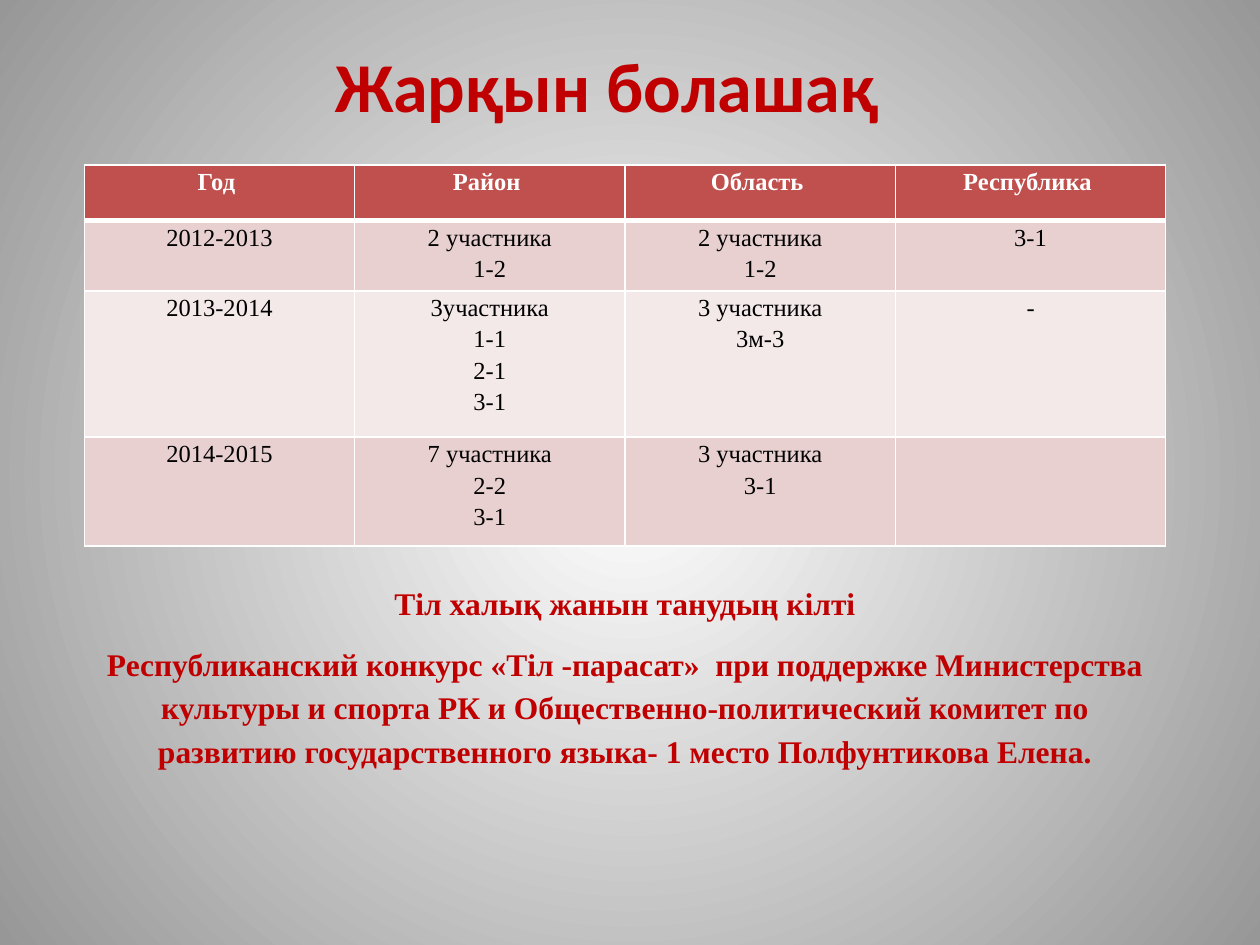
from lxml.etree import SubElement
from pptx import Presentation
from pptx.dml.color import RGBColor
from pptx.enum.text import MSO_ANCHOR, MSO_AUTO_SIZE, PP_ALIGN as AL
from pptx.oxml.ns import qn
from pptx.util import Pt

RED = RGBColor(0xC0, 0x00, 0x00)
HEADER = RGBColor(0xC0, 0x50, 0x4D)
BAND_DARK = RGBColor(0xE8, 0xD0, 0xD0)
BAND_LIGHT = RGBColor(0xF4, 0xE9, 0xE9)
WHITE = RGBColor(0xFF, 0xFF, 0xFF)
GRAY = RGBColor(0x97, 0x97, 0x97)
BLACK = RGBColor(0x00, 0x00, 0x00)
SERIF = "Times New Roman"

ROWS = [
    ["Год ", "Район ", "Область ", "Республика "],
    ["2012-2013", "2 участника\n1-2", "2 участника\n1-2", "3-1"],
    ["2013-2014", "3участника\n1-1\n2-1\n3-1", "3 участника\n3м-3", "-"],
    ["2014-2015", "7 участника\n2-2\n3-1", "3 участника\n3-1", ""],
]
ROW_HEIGHTS = [31.7, 40.3, 83.5, 62.3]
NOTES = [
    "Тіл халық жанын танудың кілті",
    "Республиканский конкурс «Тіл -парасат»  при поддержке Министерства "
    "культуры и спорта РК и Общественно-политический комитет по развитию "
    "государственного языка- 1 место Полфунтикова Елена.",
]


def format_text(tf, font, size, color, bold, align=AL.CENTER, spacing=None, after=None):
    for p in tf.paragraphs:
        p.alignment = align
        p.line_spacing = spacing
        p.space_after = after
        for r in p.runs:
            r.font.name = font
            r.font.size = Pt(size)
            r.font.bold = bold
            r.font.color.rgb = color


def set_background(s):
    fill = s.background.fill
    fill.gradient()
    for stop, color in zip(fill.gradient_stops, (WHITE, GRAY)):
        stop.color.rgb = color
    grad = s.element.find(".//" + qn("a:gradFill"))
    grad.remove(grad.find(qn("a:lin")))
    circle = SubElement(grad, qn("a:path"), path="circle")
    SubElement(circle, qn("a:fillToRect"), l="50000", t="50000", r="50000", b="50000")


def add_title(s, x, y, w, h):
    sp = s.shapes.title
    sp.left, sp.top, sp.width, sp.height = Pt(x), Pt(y), Pt(w), Pt(h)
    tf = sp.text_frame
    tf.text = "Жарқын болашақ"
    tf.word_wrap = False
    tf.auto_size = MSO_AUTO_SIZE.SHAPE_TO_FIT_TEXT
    tf.vertical_anchor = MSO_ANCHOR.TOP
    format_text(tf, "Calibri", 40, RED, True, AL.LEFT)


def set_borders(cell, top, bottom):
    tc_pr = cell._tc.get_or_add_tcPr()
    for side, width in (("L", 1), ("R", 1), ("T", top), ("B", bottom)):
        ln = SubElement(tc_pr, qn(f"a:ln{side}"), w=str(Pt(width)))
        solid = SubElement(ln, qn("a:solidFill"))
        SubElement(solid, qn("a:srgbClr"), val=str(WHITE))


def add_results(s, x, y, w, h):
    n = len(ROWS[0])
    table = s.shapes.add_table(len(ROWS), n, Pt(x), Pt(y), Pt(w), Pt(h)).table
    for col in table.columns:
        col.width = Pt(w / n)
    for i, (texts, height) in enumerate(zip(ROWS, ROW_HEIGHTS)):
        table.rows[i].height = Pt(height)
        is_header = i == 0
        band = HEADER if is_header else BAND_DARK if i % 2 else BAND_LIGHT
        for cell, text in zip(table.rows[i].cells, texts):
            cell.text = text
            cell.margin_left = cell.margin_right = Pt(5)
            cell.margin_top = cell.margin_bottom = 0
            set_borders(cell, 3 if i == 1 else 1, 3 if is_header else 1)
            cell.fill.solid()
            cell.fill.fore_color.rgb = band
            color = WHITE if is_header else BLACK
            format_text(cell.text_frame, SERIF, 14, color, is_header, spacing=1.15)


def add_notes(s, x, y, w, h):
    tf = s.shapes.add_textbox(Pt(x), Pt(y), Pt(w), Pt(h)).text_frame
    tf.word_wrap = True
    tf.auto_size = MSO_AUTO_SIZE.SHAPE_TO_FIT_TEXT
    tf.text = "\n".join(NOTES)
    format_text(tf, SERIF, 18, RED, True, spacing=1.15, after=Pt(10))


def main():
    prs = Presentation()
    prs.slide_width, prs.slide_height = Pt(720), Pt(540)
    s = prs.slides.add_slide(prs.slide_layouts[5])
    set_background(s)
    add_results(s, 48.2, 94.3, 618, sum(ROW_HEIGHTS))
    add_notes(s, 48.2, 327, 618, 117.4)
    add_title(s, 184.3, 20.9, 327.6, 55.4)
    prs.save("out.pptx")


if __name__ == "__main__":
    main()
